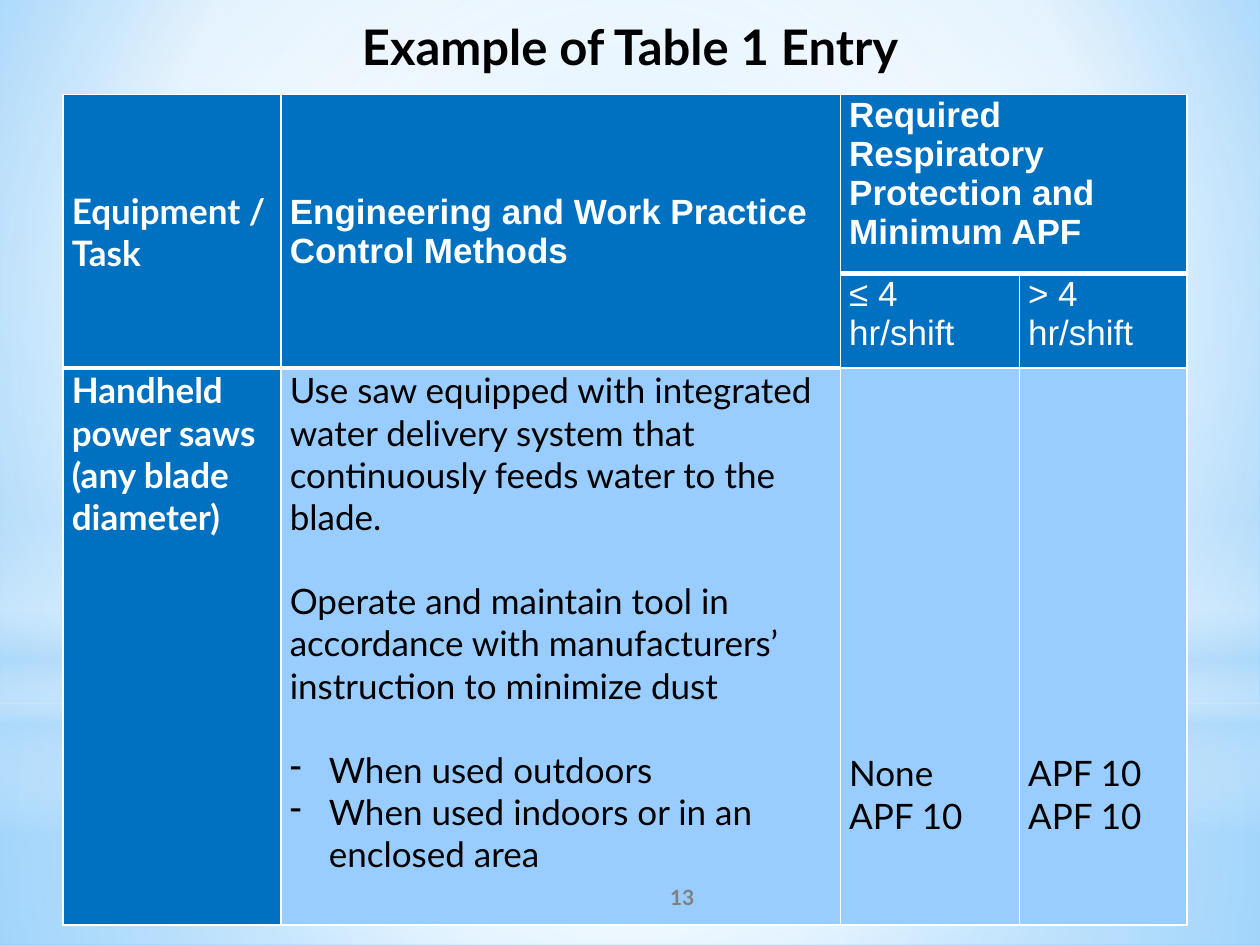
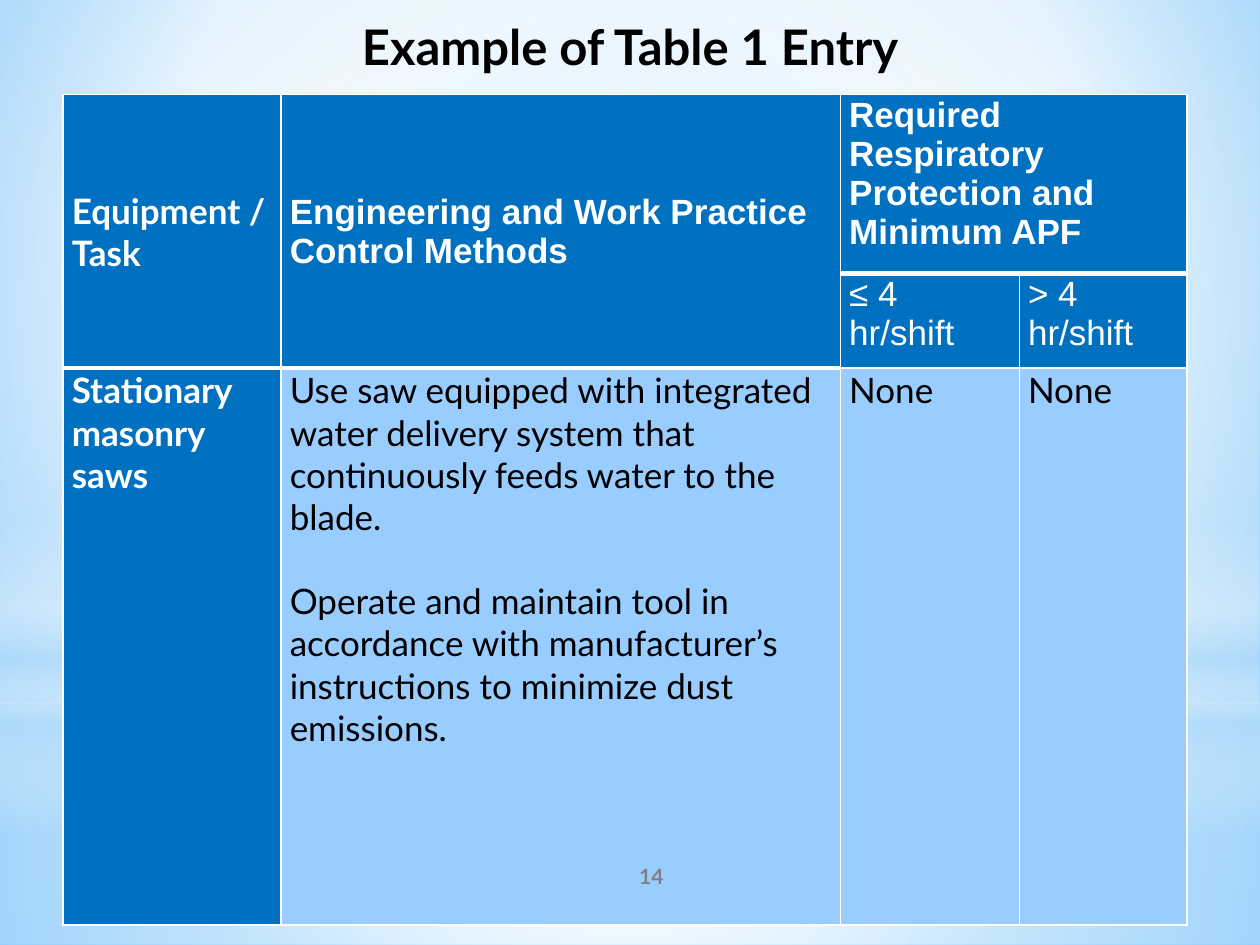
from pptx import Presentation
from pptx import util as u
from pptx.dml.color import RGBColor
from pptx.enum import shapes, text
from pptx.oxml import parse_xml
from pptx.oxml.ns import nsdecls, qn

TITLE = "Example of Table 1 Entry"
WATER = ("Use saw equipped with integrated water delivery system that "
         "continuously feeds water to the blade.")
HEADER = [
    [["Equipment / Task"], ["Engineering and Work Practice Control Methods"],
     ["Required Respiratory Protection and", "Minimum APF"], []],
    [[], [], ["≤ 4 hr/shift"], ["> 4 hr/shift"]],
]
ENTRIES = [
    {
        "task": ["Handheld power saws", "(any blade diameter)"],
        "methods": [WATER, "Operate and maintain tool in accordance with "
                    "manufacturers’ instruction to minimize dust"],
        "conditions": ["When used outdoors",
                       "When used indoors or in an enclosed area"],
        "protection": [["None", "APF 10"], ["APF 10", "APF 10"]],
        "number": ("13", (5, 6.92, 0.83, 0.4)),
    },
    {
        "task": ["Stationary masonry saws"],
        "methods": [WATER, "Operate and maintain tool in accordance with "
                    "manufacturer’s instructions to minimize dust emissions."],
        "conditions": [],
        "protection": [["None"], ["None"]],
        "number": ("14", (4.17, 6.75, 2, 0.4)),
    },
]

WIDTH, HEIGHT = 10, 7.5
COLUMNS = [1.73, 4.44, 1.42, 1.33]
ROWS = [1.42, 0.75, 4.42]
MERGES = [((0, 0), (1, 0)), ((0, 1), (1, 1)), ((0, 2), (0, 3))]
HEAVY_BOTTOMS = {(0, 0), (0, 1), (0, 2), (0, 3), (1, 0), (1, 1)}
WHITE, BLACK, GREY = "FFFFFF", "000000", "808080"
BLUE, PALE, HAZE = "0070C0", "99CCFF", "B4DCFA"
HEADING, PLAIN = "Lato", "Arial"
LINE = 24

CENTRE = (50, 50, 50, 50)
BACKDROP = ([(0, "9ED5FF", 100), (60, WHITE, 100), (100, "5BB9FF", 100)],
            (20, 10, 20, 60))
BANDS = [
    ("RECTANGLE", (0, 5.58, WIDTH, 1.92),
     [(0, WHITE, 91), (37, WHITE, 76), (100, HAZE, 79)], CENTRE),
    ("RECTANGLE", (0, 0, WIDTH, 5.58),
     [(0, WHITE, 89), (48, WHITE, 62), (100, HAZE, 79)], CENTRE),
    ("RECTANGLE", (0, 4.12, WIDTH, 2.5),
     [(0, WHITE, 0), (29, WHITE, 30), (45, HAZE, 40), (55, WHITE, 26),
      (65, HAZE, 60), (100, WHITE, 0)], None),
    ("OVAL", (0, 1.75, WIDTH, 5.58),
     [(0, WHITE, 100), (56, WHITE, 0)], CENTRE),
]


def colour(hex_string):
    return RGBColor.from_string(hex_string)


def inches(place):
    return [u.Inches(length) for length in place]


def apply_gradient(fill, holder, stops, focus):
    fill.solid()
    stop_xml = "".join(
        f'<a:gs pos="{pos * 1000}"><a:srgbClr val="{tint}">'
        f'<a:alpha val="{opacity * 1000}"/></a:srgbClr></a:gs>'
        for pos, tint, opacity in stops)
    if focus:
        sides = " ".join(f'{side}="{share * 1000}"'
                         for side, share in zip("ltrb", focus))
        direction = f'<a:path path="circle"><a:fillToRect {sides}/></a:path>'
    else:
        direction = '<a:lin ang="5400000" scaled="0"/>'
    gradient = parse_xml(f'<a:gradFill {nsdecls("a")} rotWithShape="1">'
                         f'<a:gsLst>{stop_xml}</a:gsLst>{direction}</a:gradFill>')
    holder.replace(holder.find(qn("a:solidFill")), gradient)


def add_bands(slide):
    for outline, place, stops, focus in BANDS:
        band = slide.shapes.add_shape(
            getattr(shapes.MSO_SHAPE, outline), *inches(place))
        band.shadow.inherit = False
        band.line.fill.background()
        apply_gradient(band.fill, band._element.spPr, stops, focus)


def style(paragraph, size, font, tint, bold):
    for run in paragraph.runs:
        run.font.size = u.Pt(size)
        run.font.name = font
        run.font.bold = bold
        run.font.color.rgb = colour(tint)


def add_label(slide, words, place, anchor, size, tint):
    frame = slide.shapes.add_textbox(*inches(place)).text_frame
    frame.word_wrap = True
    frame.vertical_anchor = anchor
    frame.text = words
    frame.paragraphs[0].alignment = text.PP_ALIGN.CENTER
    style(frame.paragraphs[0], size, HEADING, tint, True)


def add_dash(paragraph):
    properties = paragraph._p.get_or_add_pPr()
    indent = u.Inches(0.31)
    properties.set("marL", str(indent))
    properties.set("indent", str(-indent))
    properties.append(parse_xml(f'<a:buChar {nsdecls("a")} char="-"/>'))


def write_cell(cell, lines, font, tint, bold, gaps=(), dashes=()):
    frame = cell.text_frame
    frame.text = "\n".join(lines)
    for index, paragraph in enumerate(frame.paragraphs):
        if index in gaps:
            paragraph.space_before = u.Pt(LINE)
        if index in dashes:
            add_dash(paragraph)
        style(paragraph, 20, font, tint, bold)


def paint_cell(cell, row, column):
    cell.margin_left = cell.margin_right = u.Inches(0.07)
    cell.margin_top, cell.margin_bottom = u.Inches(0.01), 0
    cell.fill.solid()
    is_blue = row < 2 or column == 0
    cell.fill.fore_color.rgb = colour(BLUE if is_blue else PALE)
    heavy = {"T": (row - 1, column) in HEAVY_BOTTOMS,
             "B": (row, column) in HEAVY_BOTTOMS}
    for order, side in enumerate("LRTB"):
        weight = u.Pt(3 if heavy.get(side) else 1)
        border = parse_xml(
            f'<a:ln{side} {nsdecls("a")} w="{weight}"><a:solidFill>'
            f'<a:srgbClr val="{WHITE}"/></a:solidFill></a:ln{side}>')
        cell._tc.get_or_add_tcPr().insert(order, border)


def add_entry_table(slide, entry):
    place = (0.5, 0.75, sum(COLUMNS), sum(ROWS))
    table = slide.shapes.add_table(
        len(ROWS), len(COLUMNS), *inches(place)).table
    table.first_row = table.horz_banding = False
    for column, width in zip(table.columns, COLUMNS):
        column.width = u.Inches(width)
    for row, height in zip(table.rows, ROWS):
        row.height = u.Inches(height)
    for row in range(len(ROWS)):
        for column in range(len(COLUMNS)):
            paint_cell(table.cell(row, column), row, column)
    for first, last in MERGES:
        table.cell(*first).merge(table.cell(*last))

    for row, headings in enumerate(HEADER):
        for column, lines in enumerate(headings):
            if lines:
                write_cell(table.cell(row, column), lines,
                           PLAIN if column else HEADING, WHITE, row == 0)
    for column in (0, 1):
        table.cell(0, column).vertical_anchor = text.MSO_ANCHOR.MIDDLE

    methods, conditions = entry["methods"], entry["conditions"]
    count = len(methods)
    write_cell(table.cell(2, 0), entry["task"], HEADING, WHITE, True)
    write_cell(table.cell(2, 1), methods + conditions, HEADING, BLACK, False,
               gaps=range(1, count + 1),
               dashes=range(count, count + len(conditions)))
    for column, lines in enumerate(entry["protection"], 2):
        cell = table.cell(2, column)
        write_cell(cell, lines, HEADING, BLACK, False)
        if conditions:
            cell.vertical_anchor = text.MSO_ANCHOR.BOTTOM
            cell.margin_bottom = u.Inches(0.7)


def main():
    deck = Presentation()
    deck.slide_width, deck.slide_height = inches((WIDTH, HEIGHT))
    master = deck.slide_master
    backdrop = master.background.fill
    backdrop.solid()
    apply_gradient(backdrop, master._element.find(".//" + qn("p:bgPr")),
                   *BACKDROP)
    for entry in ENTRIES:
        slide = deck.slides.add_slide(deck.slide_layouts[6])
        add_bands(slide)
        add_label(slide, TITLE, (0.5, 0.08, 9, 0.75),
                  text.MSO_ANCHOR.TOP, 28, BLACK)
        add_entry_table(slide, entry)
        number, place = entry["number"]
        add_label(slide, number, place, text.MSO_ANCHOR.MIDDLE, 12, GREY)
    deck.save("out.pptx")


if __name__ == "__main__":
    main()
